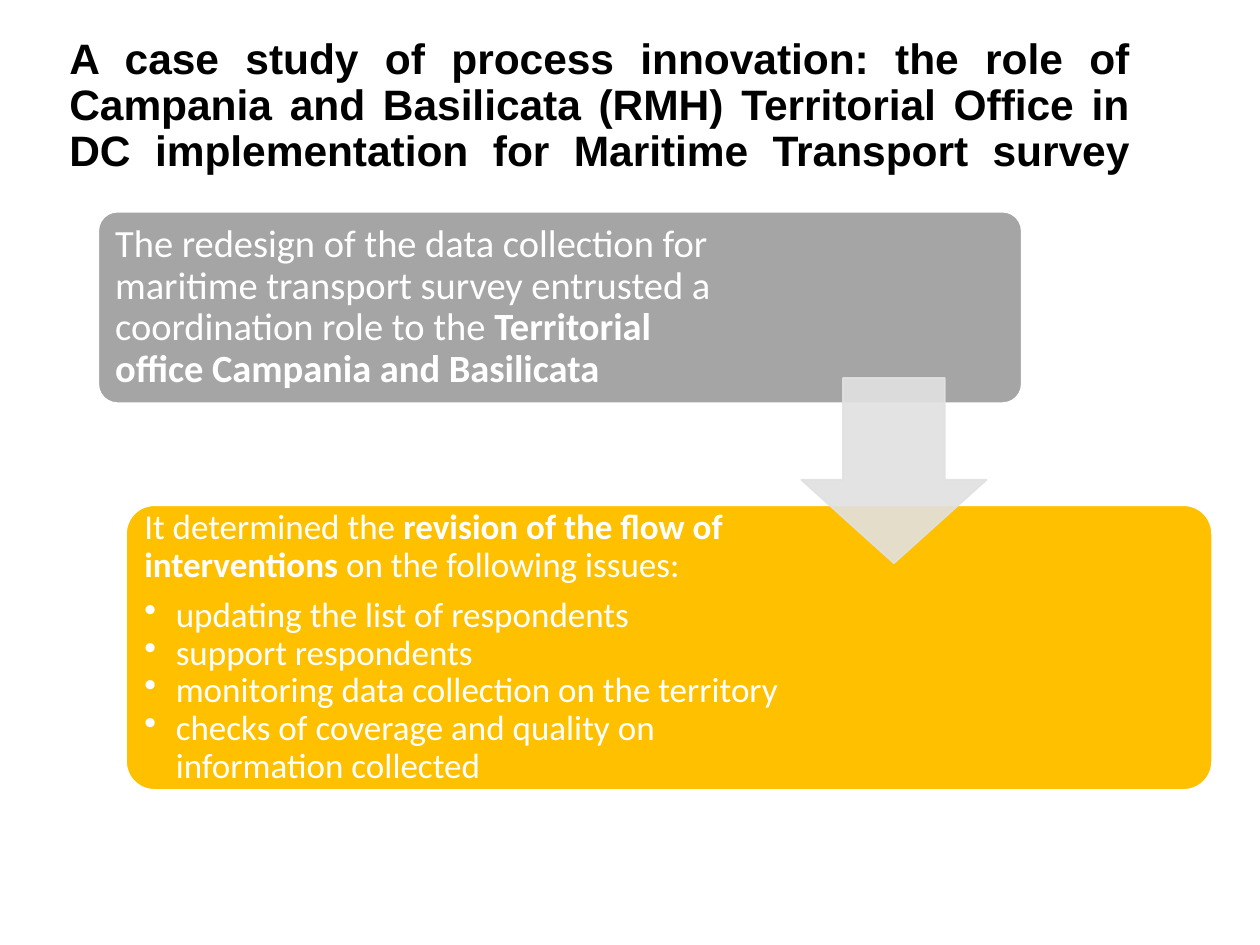
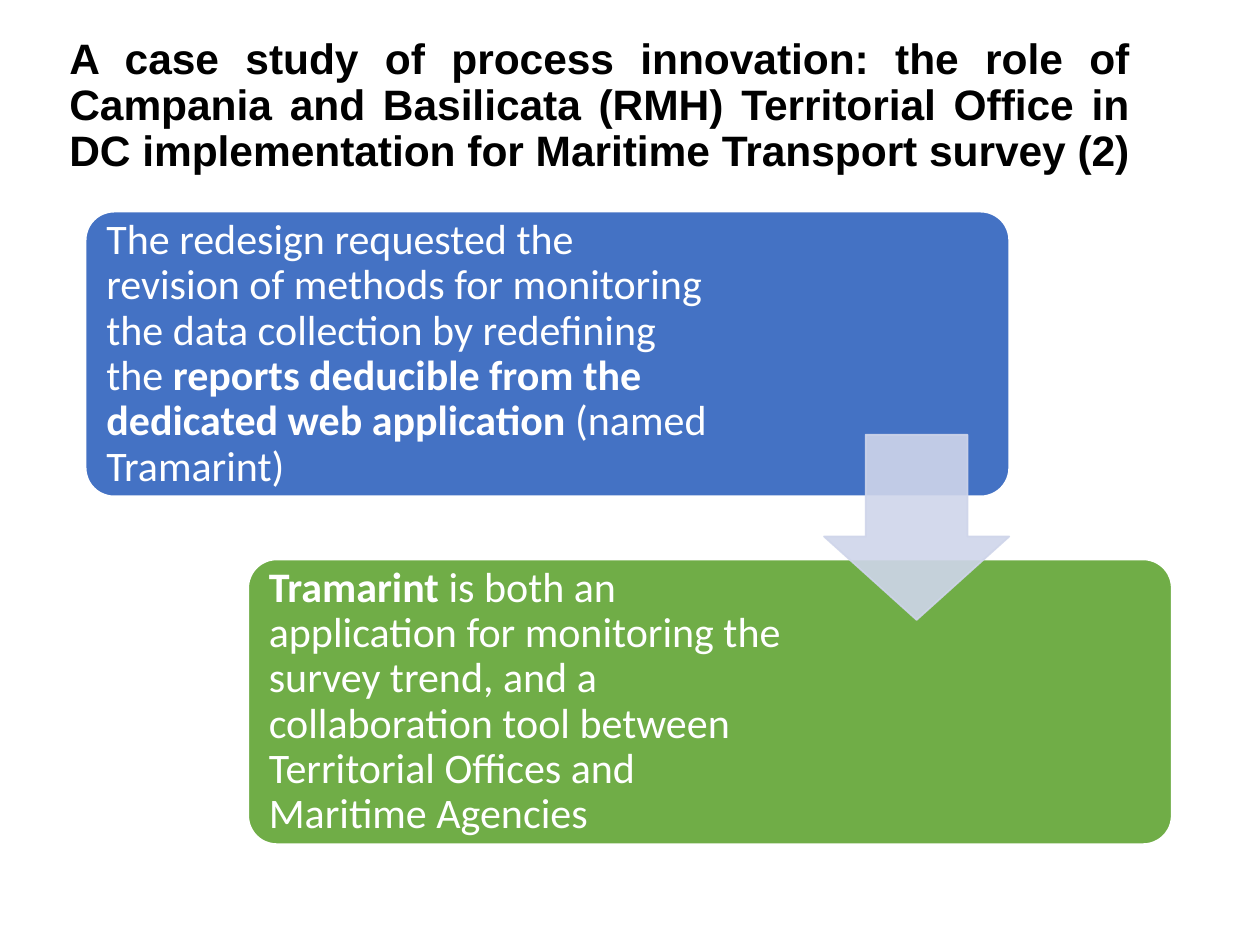
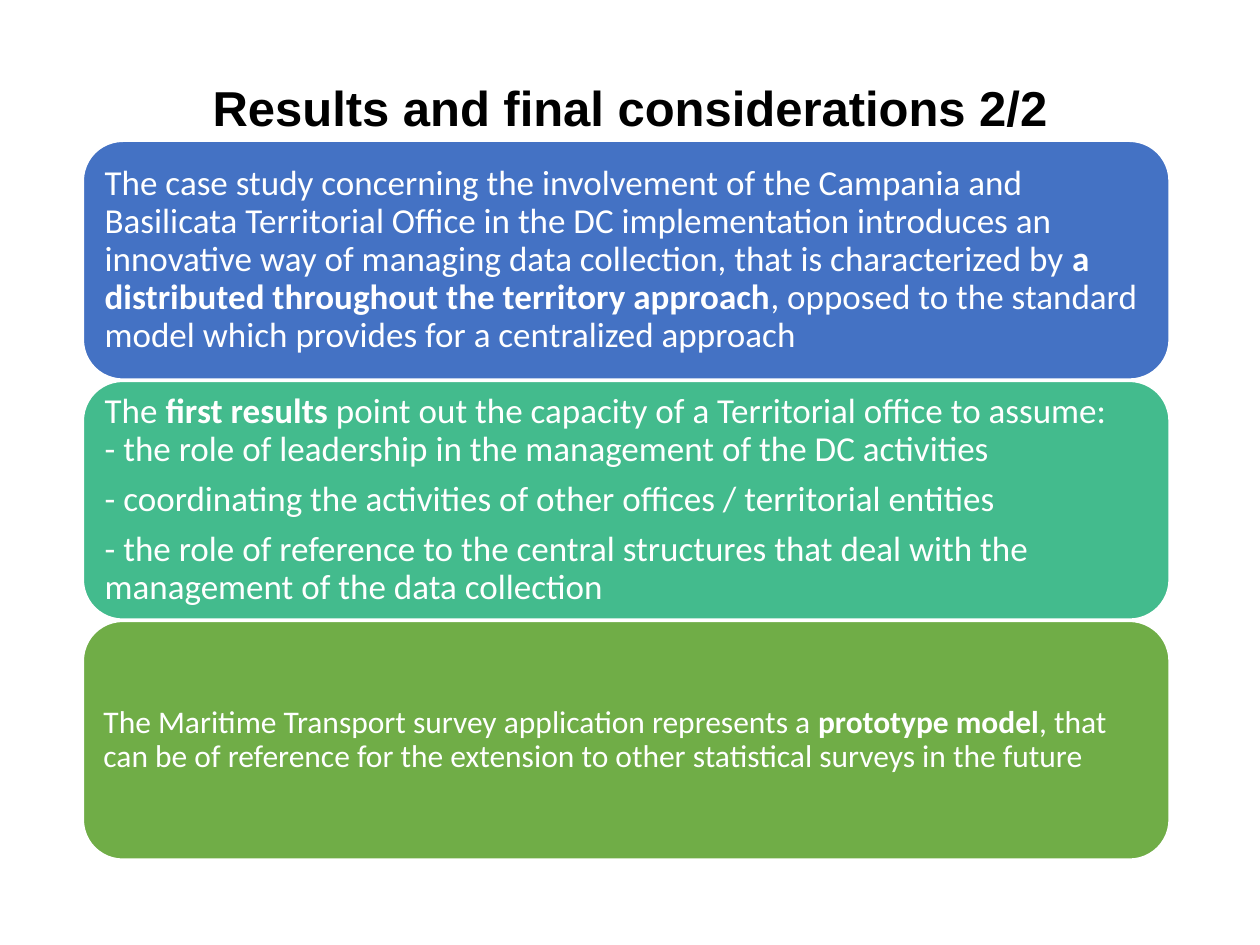
from dataclasses import dataclass

from lxml import etree
from pptx import Presentation
from pptx.dml.color import RGBColor
from pptx.enum.shapes import MSO_SHAPE
from pptx.enum.text import MSO_ANCHOR, MSO_AUTO_SIZE, PP_ALIGN
from pptx.oxml.ns import qn
from pptx.util import Inches, Pt

ROUND_RECT = MSO_SHAPE.ROUNDED_RECTANGLE
DOWN_ARROW = MSO_SHAPE.DOWN_ARROW
MIDDLE = MSO_ANCHOR.MIDDLE
NO_FIT = MSO_AUTO_SIZE.NONE
LEFT, CENTER, JUSTIFY = PP_ALIGN.LEFT, PP_ALIGN.CENTER, PP_ALIGN.JUSTIFY

BLACK = RGBColor(0x00, 0x00, 0x00)
WHITE = RGBColor(0xFF, 0xFF, 0xFF)
GRAY = RGBColor(0xA5, 0xA5, 0xA5)
AMBER = RGBColor(0xFF, 0xC0, 0x00)
BLUE = RGBColor(0x44, 0x72, 0xC4)
TEAL = RGBColor(0x43, 0xBB, 0x8D)
GREEN = RGBColor(0x70, 0xAD, 0x47)
PALE_GRAY = RGBColor(0xE1, 0xE1, 0xE1)
PALE_BLUE = RGBColor(0xCF, 0xD5, 0xEA)

TITLE_FONT, BODY_FONT = "Arial", "Calibri"
CASE_TITLE_SIZE = 24.3
LINE_SPACING = 0.9
CORNER_INSET = 0.29  # share of the corner radius kept clear of text
BULLET = "• "
CASE_TITLE = (
    "A case study of process innovation: the role of Campania and Basilicata (RMH) "
    "Territorial Office in DC implementation for Maritime Transport survey"
)


@dataclass
class Card:
    """A rounded box; *stars* in its text enclose bold words."""
    left: float
    top: float
    width: float
    height: float
    text_width: float
    fill: RGBColor
    size: int
    inset: float
    paragraphs: list[str]
    corner: float = 0.1


@dataclass
class Arrow:
    left: float
    top: float
    color: RGBColor
    side: float = 1.47


def style_master_title(prs) -> None:
    style = prs.slide_master.element.find(
        f".//{qn('p:titleStyle')}/{qn('a:lvl1pPr')}/{qn('a:defRPr')}")
    style.set("sz", str(round(CASE_TITLE_SIZE * 100)))


def add_titled_slide(prs, text: str, left: float, top: float, size: float, align):
    slide = prs.slides.add_slide(prs.slide_layouts[5])
    title = slide.shapes.title
    title.left, title.top = Inches(left), Inches(top)
    title.width, title.height = Inches(8.62), Inches(0.95)
    tf = title.text_frame
    tf.text = text
    tf.word_wrap, tf.auto_size, tf.vertical_anchor = True, NO_FIT, MIDDLE
    p = tf.paragraphs[0]
    p.alignment, p.line_spacing = align, LINE_SPACING
    for r in p.runs:
        r.font.name, r.font.size, r.font.bold = TITLE_FONT, Pt(size), True
        r.font.color.rgb = BLACK
    return slide


def add_solid_shape(slide, kind, left, top, width, height, fill, line):
    sp = slide.shapes.add_shape(
        kind, Inches(left), Inches(top), Inches(width), Inches(height))
    sp.shadow.inherit = False
    sp.fill.solid()
    sp.fill.fore_color.rgb = fill
    sp.line.color.rgb = line
    sp.line.width = Pt(1)
    return sp


def write_paragraph(p, text: str, size: int) -> None:
    p.alignment, p.line_spacing = LEFT, LINE_SPACING
    p.space_before = Pt(0)
    if text.startswith(BULLET):
        text = text.removeprefix(BULLET)
        p.space_after = Pt(0)
        pPr = p._p.get_or_add_pPr()
        pPr.set("marL", str(Inches(0.25)))
        pPr.set("indent", str(Inches(-0.25)))
        etree.SubElement(pPr, qn("a:buChar")).set("char", BULLET.strip())
    else:
        p.space_after = Pt(0.35 * size)
    for i, segment in enumerate(text.split("*")):
        for j, line in enumerate(segment.split("\n")):
            if j:
                p.add_line_break()
            if line:
                r = p.add_run()
                r.text = line
                r.font.name, r.font.size = BODY_FONT, Pt(size)
                r.font.bold = i % 2 == 1
                r.font.color.rgb = WHITE


def add_card(slide, card: Card) -> None:
    sp = add_solid_shape(slide, ROUND_RECT, card.left, card.top,
                         card.width, card.height, card.fill, WHITE)
    sp.adjustments[0] = card.corner
    pad = CORNER_INSET * card.corner * card.height
    box = slide.shapes.add_textbox(
        Inches(card.left + pad), Inches(card.top + pad),
        Inches(card.text_width), Inches(card.height - 2 * pad))
    tf = box.text_frame
    tf.word_wrap, tf.auto_size, tf.vertical_anchor = True, NO_FIT, MIDDLE
    tf.margin_left = tf.margin_right = Inches(card.inset)
    tf.margin_top = tf.margin_bottom = Inches(card.inset)
    for i, text in enumerate(card.paragraphs):
        p = tf.add_paragraph() if i else tf.paragraphs[0]
        write_paragraph(p, text, card.size)


def add_arrow(slide, arrow: Arrow) -> None:
    sp = add_solid_shape(slide, DOWN_ARROW, arrow.left, arrow.top,
                         arrow.side, arrow.side, arrow.color, arrow.color)
    sp.adjustments[0], sp.adjustments[1] = 0.55, 0.45
    for color in sp._element.spPr.iter(qn("a:srgbClr")):
        etree.SubElement(color, qn("a:alpha")).set("val", "90000")


def add_case_slide(prs, title: str, cards: list[Card], arrow: Arrow) -> None:
    # The closing break stretches the last line; the opening one balances it.
    slide = add_titled_slide(prs, f"\v{title}\v", 0.45, 0.39, CASE_TITLE_SIZE, JUSTIFY)
    for card in cards:
        add_card(slide, card)
    add_arrow(slide, arrow)


def add_results_slide(prs) -> None:
    slide = add_titled_slide(
        prs, "Results and final considerations 2/2", 0.69, 0.4, 28, CENTER)
    results = [
        (BLUE, 20, 0.08, [
            "The case study concerning the involvement of the Campania and Basilicata "
            "Territorial Office in the DC implementation introduces an innovative way of "
            "managing data collection, that is characterized by *a distributed throughout "
            "the territory approach*, opposed to the standard model which provides for a "
            "centralized approach"]),
        (TEAL, 20, 0.08, [
            "The *first results *point out the capacity of a Territorial office to assume:\n"
            "- the role of leadership in the management of the DC activities",
            "- coordinating the activities of other offices / territorial entities",
            "- the role of reference to the central structures that deal with the "
            "management of the data collection"]),
        (GREEN, 18, 0.07, [
            "The Maritime Transport survey application represents a *prototype model*, that "
            "can be of reference for the extension to other statistical surveys in the "
            "future"]),
    ]
    for i, (fill, size, inset, paragraphs) in enumerate(results):
        add_card(slide, Card(0.66, 1.12 + 1.905 * i, 8.62, 1.89, 8.44,
                             fill, size, inset, paragraphs, corner=0.1667))


def main() -> None:
    prs = Presentation()
    prs.slide_width, prs.slide_height = Inches(10), Inches(7.5)
    style_master_title(prs)
    add_case_slide(prs, CASE_TITLE, [
        Card(0.78, 1.68, 7.33, 1.52, 5.04, GRAY, 22, 0.09, [
            "The redesign of the data collection for maritime transport survey entrusted a "
            "coordination role to the *Territorial office Campania and Basilicata*"]),
        Card(1, 4.01, 8.62, 2.26, 5.24, AMBER, 20, 0.08, [
            "It determined the *revision of the flow of interventions *on the following "
            "issues:",
            "• updating the list of respondents",
            "• support respondents",
            "• monitoring data collection on the territory",
            "• checks of coverage and quality on information collected"]),
    ], Arrow(6.36, 3, PALE_GRAY))
    add_case_slide(prs, f"{CASE_TITLE} (2)", [
        Card(0.68, 1.68, 7.33, 2.26, 4.99, BLUE, 24, 0.1, [
            "The redesign requested the revision of methods for monitoring the data "
            "collection by redefining the *reports deducible from the dedicated web "
            "application *(named Tramarint)"]),
        Card(1.97, 4.44, 7.33, 2.26, 4.43, GREEN, 24, 0.1, [
            "*Tramarint* is both an application for monitoring the survey trend, and a "
            "collaboration tool between Territorial Offices and Maritime Agencies"]),
    ], Arrow(6.54, 3.45, PALE_BLUE))
    add_results_slide(prs)
    prs.save("out.pptx")


if __name__ == "__main__":
    main()
